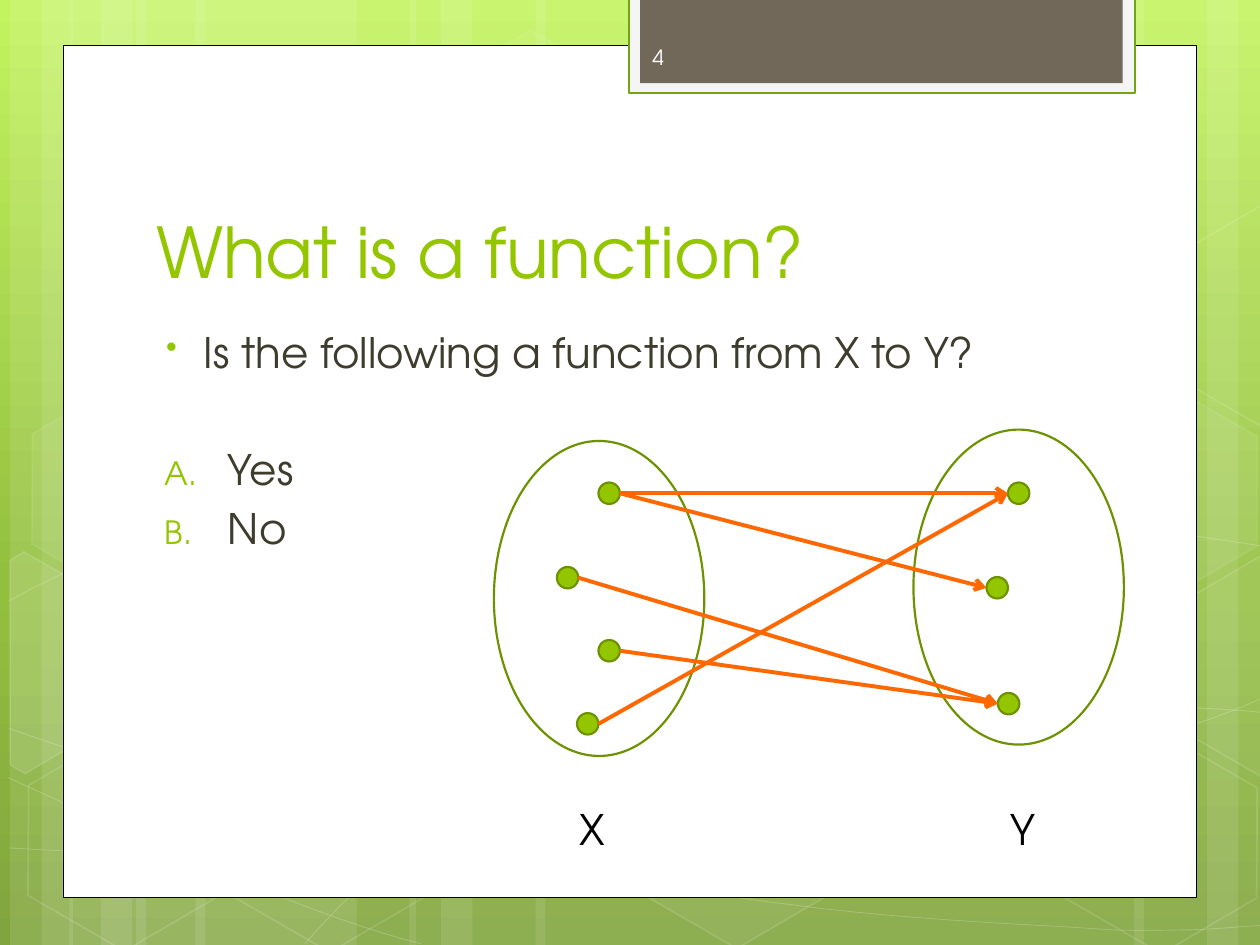
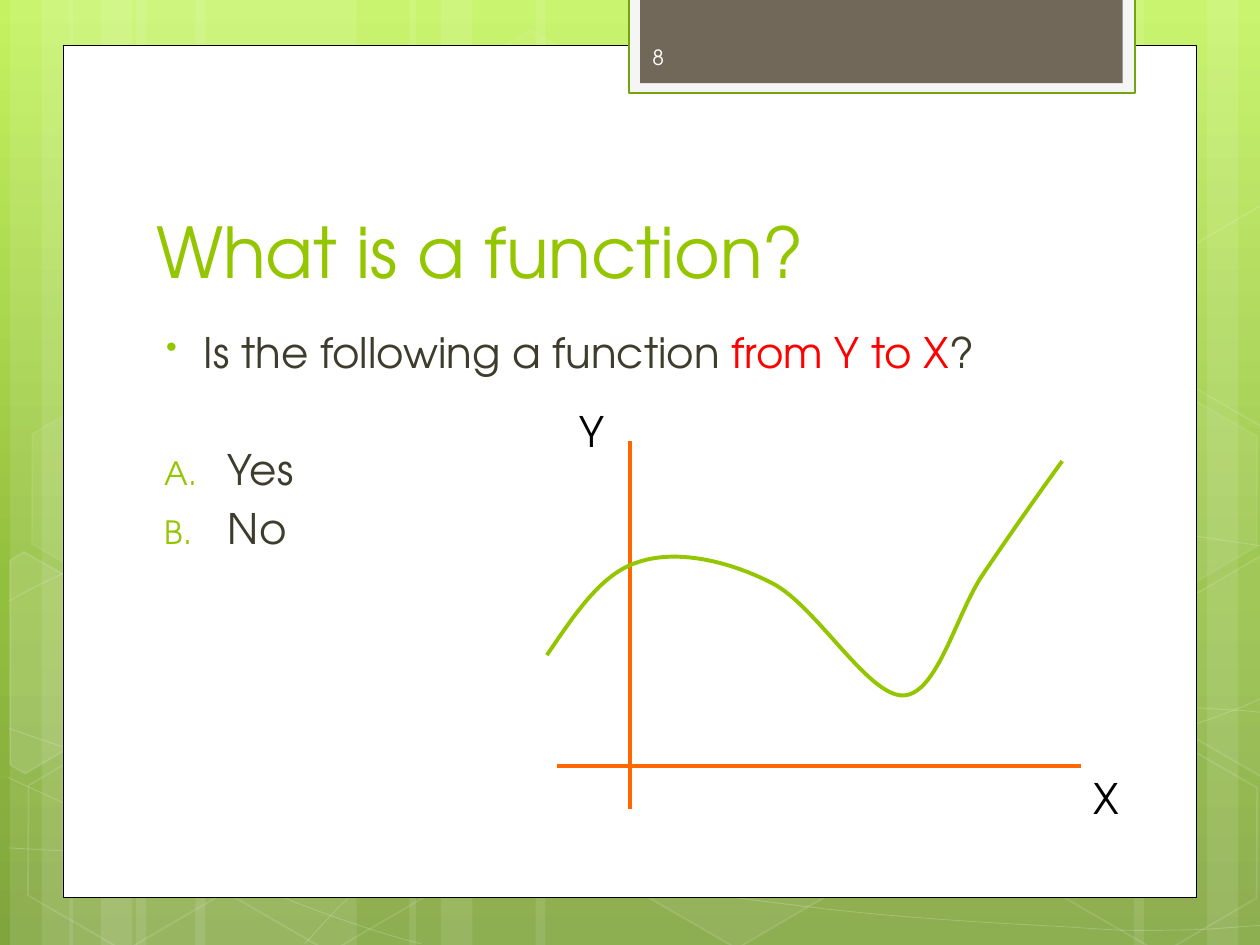
from copy import deepcopy

from pptx import Presentation
from pptx.dml.color import RGBColor
from pptx.enum.shapes import MSO_CONNECTOR as Connector, MSO_SHAPE as Shape
from pptx.enum.text import MSO_ANCHOR as Anchor, MSO_AUTO_SIZE as AutoSize
from pptx.oxml.ns import qn
from pptx.oxml.xmlchemy import OxmlElement
from pptx.util import Inches, Pt

WHITE = RGBColor(0xFF, 0xFF, 0xFF)
BLACK = RGBColor(0x00, 0x00, 0x00)
RED = RGBColor(0xFF, 0x00, 0x00)
ORANGE = RGBColor(0xFF, 0x67, 0x00)
GREEN = RGBColor(0x94, 0xC6, 0x00)
DARK_GREEN = RGBColor(0x6D, 0x92, 0x00)
TAB_GREEN = RGBColor(0x74, 0xA5, 0x10)
TAB_EDGE = RGBColor(0xF5, 0xF5, 0xF5)
TAB_BROWN = RGBColor(0x71, 0x68, 0x5A)
BODY_TEXT = RGBColor(0x3E, 0x3D, 0x2D)
NUMBER_TEXT = RGBColor(0xFE, 0xFE, 0xFE)
GRADIENT = [(0, RGBColor(0xC3, 0xF3, 0x5F)), (0.62, RGBColor(0x93, 0xBF, 0x3F)),
            (1, RGBColor(0x81, 0xA5, 0x3E))]

# Left edge and width of the translucent vertical stripes
STRIPES = [(1.08, 1.75), (0.08, 0.5), (0.33, 0.83), (1.55, 1.75), (0.55, 0.5), (0.8, 0.83),
           (7.33, 1.75), (9.58, 0.5), (9, 0.83), (4.25, 3.08), (3.25, 0.5), (3.5, 0.83)]

# Bézier curves: the start, then two control points and an end for each segment
BACKGROUND_CURVES = [
    [(0.07, 6.73), (0.61, 6.76), (1.15, 6.79), (1.9, 6.78), (2.65, 6.77), (3.58, 6.75),
     (4.58, 6.65), (5.58, 6.55), (7, 6.36), (7.92, 6.17), (8.83, 5.98), (9.77, 5.68),
     (10.07, 5.51)],
    [(0.07, 4.77), (0.36, 4.61), (0.65, 4.46), (1.21, 4.31), (1.78, 4.16), (2.59, 3.94),
     (3.47, 3.87), (4.36, 3.8), (5.44, 3.79), (6.54, 3.87), (7.64, 3.95), (9.47, 4.26),
     (10.07, 4.34)],
    [(0.06, 6.17), (1.27, 6.72), (2.47, 7.27), (3.34, 7.49)],
    [(0.07, 5.78), (0.38, 5.89), (0.7, 6), (1.28, 6.16), (1.86, 6.31), (2.73, 6.56),
     (3.57, 6.73), (4.4, 6.9), (5.45, 7.08), (6.28, 7.18), (7.11, 7.29), (8, 7.33),
     (8.53, 7.36), (9.05, 7.4), (9.19, 7.38), (9.45, 7.38), (9.71, 7.37), (9.89, 7.35),
     (10.07, 7.34)],
    [(2.42, 7.49), (2.6, 7.29), (2.78, 7.09), (3.02, 6.91), (3.26, 6.73), (3.6, 6.53),
     (3.88, 6.39), (4.16, 6.25), (4.33, 6.19), (4.7, 6.09), (5.06, 5.99), (5.73, 5.85),
     (6.08, 5.78), (6.44, 5.71), (6.49, 5.71), (6.8, 5.69), (7.11, 5.66), (7.6, 5.63),
     (7.94, 5.62), (8.29, 5.61), (8.86, 5.62), (8.86, 5.62), (8.86, 5.62), (9.53, 5.62),
     (9.53, 5.62), (9.71, 5.63), (9.88, 5.64), (9.97, 5.65), (10.06, 5.66), (10.03, 5.65),
     (10.06, 5.66)],
]
FUNCTION_CURVE = [
    (4.34, 5.2), (4.56, 4.88), (4.77, 4.55), (5.07, 4.46), (5.37, 4.36), (5.78, 4.45),
    (6.13, 4.63), (6.48, 4.81), (6.89, 5.53), (7.17, 5.52), (7.44, 5.51), (7.59, 4.87),
    (7.8, 4.56), (8.01, 4.25), (8.22, 3.95), (8.43, 3.66)]

# Left, top, fill opacity and line opacity in percent
HEXAGONS = [(3.34, 0.36, 4, 8), (4.97, 5.89, 6, 12), (0.11, 5.91, None, 12),
            (0.14, 3.12, 7, 8), (1.74, 5.92, None, 12), (8.34, 5.93, None, 12),
            (8.34, 3.14, 7, 8)]
# Hexagons cut off by the slide edge: corners and fill opacity
CUT_HEXAGONS = [
    ([(0.08, 4.45), (0.19, 4.38), (0.96, 4.82), (0.95, 5.7), (0.2, 6.14), (0.08, 6.07)], 10),
    ([(9.26, 4.85), (10.01, 4.41), (10.09, 4.46), (10.09, 6.13), (10.02, 6.17),
      (9.26, 5.73)], 4),
    ([(9.26, 2.07), (10.01, 1.63), (10.1, 1.68), (10.09, 3.35), (10.02, 3.39),
      (9.26, 2.95)], None),
]

DOT = 0.17
X_DOTS = [(4.75, 3.83), (4.42, 4.5), (4.75, 5.08), (4.58, 5.66)]
Y_DOTS = [(8, 3.83), (7.83, 4.58), (7.92, 5.5)]
MAPPING = [(0, 0), (0, 1), (1, 2), (2, 2), (3, 0)]


def set_opacity(parent, percent):
    """Make the solid fill directly inside an XML element translucent."""
    alpha = OxmlElement("a:alpha")
    alpha.set("val", str(percent * 1000))
    parent.find(qn("a:solidFill"))[0].append(alpha)


class SlideBuilder:
    """Holds the common style and the slide being drawn."""

    font = "TeX Gyre Adventor"
    body_size = 24

    def __init__(self, presentation):
        self.presentation = presentation
        self.slide = None

    def start_slide(self, number, title):
        self.slide = self.presentation.slides.add_slide(self.presentation.slide_layouts[6])
        self.gradient_background()
        self.decorations()
        self.box(Shape.RECTANGLE, 0.5, 0.36, 9, 6.76, WHITE, BLACK, 0.5)
        self.box(Shape.RECTANGLE, 4.99, -0.02, 4.02, 0.76, TAB_EDGE, TAB_GREEN)
        self.box(Shape.RECTANGLE, 5.08, -0.02, 3.83, 0.68, TAB_BROWN)
        self.text(1.14, 1.12, 7.68, 1.25, title, GREEN, 40, vertical_anchor=Anchor.BOTTOM)
        self.text(5.08, 0.25, 1.46, 0.4, str(number), NUMBER_TEXT, 12,
                  vertical_anchor=Anchor.MIDDLE)

    def gradient_background(self):
        fill = self.slide.background.fill
        fill.gradient()
        fill.gradient_angle = 270
        stop_list = fill.gradient_stops._gsLst
        stop_list.append(deepcopy(stop_list[0]))
        for stop, (position, color) in zip(fill.gradient_stops, GRADIENT):
            stop.position = position
            stop.color.rgb = color

    def decorations(self):
        for left, width in STRIPES:
            self.box(Shape.RECTANGLE, left, 0, width, 7.5, WHITE, fill_opacity=10)
        for points in BACKGROUND_CURVES:
            self.curve(points, WHITE, 0.5, 20)
        for left, top, fill_opacity, line_opacity in HEXAGONS:
            hexagon = self.box(Shape.HEXAGON, left, top, 1.75, 1.52, fill_opacity and WHITE,
                               WHITE, 1, fill_opacity, line_opacity)
            hexagon.rotation = 30
            hexagon.adjustments[0] = 0.285
        for corners, fill_opacity in CUT_HEXAGONS:
            self.style(self.outline(corners, close=True), fill_opacity and WHITE, WHITE, 1,
                       fill_opacity, 12)

    def style(self, shape, fill=None, line=None, line_width=1.25,
              fill_opacity=None, line_opacity=None):
        shape.shadow.inherit = False
        for target, color in ((shape.fill, fill), (shape.line.fill, line)):
            if color is None:
                target.background()
            else:
                target.solid()
                target.fore_color.rgb = color
        if line is not None:
            shape.line.width = Pt(line_width)
        properties = shape._element.spPr
        if fill_opacity:
            set_opacity(properties, fill_opacity)
        if line_opacity:
            set_opacity(properties.find(qn("a:ln")), line_opacity)
        return shape

    def box(self, kind, left, top, width, height, *style):
        raise NotImplementedError

    def box(self, kind, left, top, width, height, fill=None, line=None, line_width=1.25,
            fill_opacity=None, line_opacity=None):
        shape = self.slide.shapes.add_shape(
            kind, Inches(left), Inches(top), Inches(width), Inches(height))
        return self.style(shape, fill, line, line_width, fill_opacity, line_opacity)

    def outline(self, points, close):
        start, *rest = [(Inches(x), Inches(y)) for x, y in points]
        builder = self.slide.shapes.build_freeform(*start)
        builder.add_line_segments(rest, close=close)
        return builder.convert_to_shape()

    def curve(self, points, color, width, opacity=None):
        """Draw an outline and join each three of its segments into one Bézier segment."""
        shape = self.outline(points, close=False)
        segments = list(shape._element.iter(qn("a:lnTo")))
        for first in range(0, len(segments), 3):
            bezier = OxmlElement("a:cubicBezTo")
            segments[first].addprevious(bezier)
            for segment in segments[first:first + 3]:
                bezier.append(segment[0])
                segment.getparent().remove(segment)
        self.style(shape, None, color, width, None, opacity)

    def line(self, start, end, arrow=False):
        connector = self.slide.shapes.add_connector(
            Connector.STRAIGHT, *[Inches(value) for value in (*start, *end)])
        connector.line.color.rgb = ORANGE
        connector.line.width = Pt(2.25)
        properties = connector._element.spPr
        if arrow:
            tail = OxmlElement("a:tailEnd")
            tail.set("type", "arrow")
            properties.find(qn("a:ln")).append(tail)
        properties.append(OxmlElement("a:effectLst"))

    def run(self, paragraph, text, color, size):
        run = paragraph.add_run()
        run.text = text
        run.font.color.rgb = color
        for name, value in {"name": self.font, "size": Pt(size)}.items():
            setattr(run.font, name, value)

    def text(self, left, top, width, height, text, color, size, **frame_format):
        box = self.slide.shapes.add_textbox(
            Inches(left), Inches(top), Inches(width), Inches(height))
        frame = box.text_frame
        for name, value in {"word_wrap": True, **frame_format}.items():
            setattr(frame, name, value)
        if text:
            self.run(frame.paragraphs[0], text, color, size)
        return frame

    def label(self, left, top, text):
        self.text(left, top, 0.42, 0.5, text, BLACK, self.body_size,
                  auto_size=AutoSize.SHAPE_TO_FIT_TEXT)

    def bullet(self, paragraph, margin, indent, space_before, tag, **attributes):
        paragraph.space_before = Pt(space_before)
        properties = paragraph._p.get_or_add_pPr()
        properties.set("marL", str(Inches(margin)))
        properties.set("indent", str(Inches(indent)))
        color = OxmlElement("a:buClr")
        rgb = OxmlElement("a:srgbClr")
        rgb.set("val", str(GREEN))
        color.append(rgb)
        size = OxmlElement("a:buSzPct")
        size.set("val", "76000")
        mark = OxmlElement(tag)
        for name, value in attributes.items():
            mark.set(name, value)
        properties.extend([color, size, mark])

    def question(self, parts, answers=("Yes", "No")):
        """Write the question from (text, color) parts, then the lettered answers."""
        frame = self.text(1.14, 2.54, 7.41, 4.04, "", BODY_TEXT, self.body_size)
        paragraph = frame.paragraphs[0]
        self.bullet(paragraph, 0.38, -0.3, 4.8, "a:buChar", char="•")
        for text, color in parts:
            self.run(paragraph, text, color, self.body_size)
        for index, answer in enumerate(answers):
            paragraph = frame.add_paragraph()
            self.bullet(paragraph, 0.57, -0.5, 4.8 if index else 38.5,
                        "a:buAutoNum", type="alphaUcPeriod")
            self.run(paragraph, answer, BODY_TEXT, self.body_size)


def mapping_slide(builder):
    builder.start_slide(4, "What is a function?")
    builder.question([("Is the following a function from X to Y?", BODY_TEXT)])
    for left, top in ((3.92, 3.5), (7.25, 3.41)):
        builder.box(Shape.OVAL, left, top, 1.67, 2.5, None, DARK_GREEN)
    builder.label(4.5, 6.33, "X")
    builder.label(7.92, 6.33, "Y")
    for left, top in X_DOTS + Y_DOTS:
        builder.box(Shape.OVAL, left, top, DOT, DOT, GREEN, DARK_GREEN)
    for source, target in MAPPING:
        (x_left, x_top), (y_left, y_top) = X_DOTS[source], Y_DOTS[target]
        builder.line((x_left + DOT, x_top + DOT / 2), (y_left, y_top + DOT / 2), arrow=True)


def graph_slide(builder):
    builder.start_slide(8, "What is a function?")
    builder.question([("Is the following a function ", BODY_TEXT), ("from Y to X", RED),
                      ("?", BODY_TEXT)])
    builder.line((4.42, 6.08), (8.58, 6.08))
    builder.line((5, 6.42), (5, 3.5))
    builder.label(8.58, 6.08, "X")
    builder.label(4.5, 3.17, "Y")
    builder.curve(FUNCTION_CURVE, GREEN, 2.25)


def main():
    presentation = Presentation()
    presentation.slide_width = Inches(10)
    presentation.slide_height = Inches(7.5)
    builder = SlideBuilder(presentation)
    mapping_slide(builder)
    graph_slide(builder)
    presentation.save("out.pptx")


if __name__ == "__main__":
    main()
